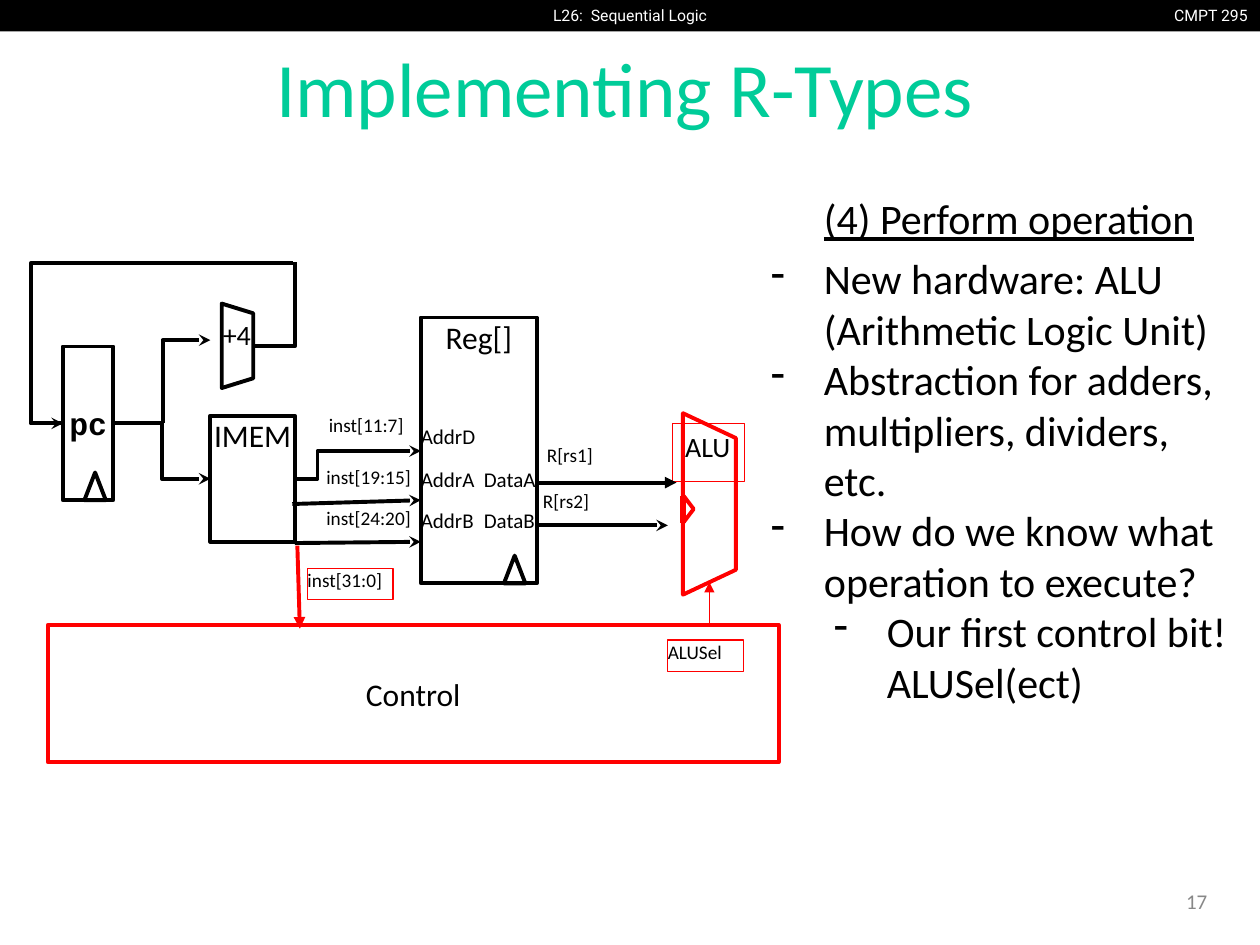
import pptx
import pptx.util
import pptx.dml.color
import pptx.enum.shapes
import pptx.enum.text
import pptx.oxml
import pptx.oxml.ns

hues = {"black": "000000", "white": "FFFFFF", "red": "FF0000",
        "green": "00CC99", "gray": "888888"}
kinds = pptx.enum.shapes.MSO_SHAPE
links = pptx.enum.shapes.MSO_CONNECTOR
sides = pptx.enum.text.PP_ALIGN
spots = pptx.enum.text.MSO_ANCHOR
Pt = pptx.util.Pt
xmlns = pptx.oxml.ns.nsdecls("a")
tint = {name: pptx.dml.color.RGBColor.from_string(code)
        for name, code in hues.items()}

deck = pptx.Presentation()
deck.slide_width = pptx.util.Inches(10)
deck.slide_height = pptx.util.Inches(7.5)
col = deck.slide_width / 100
row = deck.slide_height / 75
slide = deck.slides.add_slide(deck.slide_layouts[6])


def box(place, text="", kind=None, fill=None, line=None, thick=2.25, turn=0,
        skew=None, pad=(0, 0), side="LEFT", spot="TOP", hue="black", size=18,
        face="Calibri", bold=False):
    x, y, w, h = place
    area = [round(n) for n in (x * col, y * row, w * col, h * row)]
    if kind is None:
        item = slide.shapes.add_textbox(*area)
    else:
        item = slide.shapes.add_shape(kind, *area)
        item.shadow.inherit = False
        item.rotation = turn
        if skew is not None:
            item.adjustments[0] = skew
        if fill:
            item.fill.solid()
            item.fill.fore_color.rgb = tint[fill]
        else:
            item.fill.background()
        if line:
            item.line.color.rgb = tint[line]
            item.line.width = Pt(thick)
        else:
            item.line.fill.background()
    frame = item.text_frame
    across, down = round(pad[0] * col), round(pad[1] * row)
    look = {"word_wrap": True, "vertical_anchor": getattr(spots, spot),
            "margin_left": across, "margin_right": across,
            "margin_top": down, "margin_bottom": down}
    for key, value in look.items():
        setattr(frame, key, value)
    if text:
        para = frame.paragraphs[0]
        para.alignment = getattr(sides, side)
        run = para.add_run()
        run.text = text
        for key, value in {"name": face, "size": Pt(size), "bold": bold}.items():
            setattr(run.font, key, value)
        run.font.color.rgb = tint[hue]
    return item


def wire(start, end, hue="black", thick=2.25, head=None, bend=None):
    kind = links.STRAIGHT if bend is None else links.ELBOW
    ends = [round(n) for x, y in (start, end) for n in (x * col, y * row)]
    item = slide.shapes.add_connector(kind, *ends)
    item.line.color.rgb = tint[hue]
    item.line.width = Pt(thick)
    props = item._element.spPr
    if head:
        props.find(pptx.oxml.ns.qn("a:ln")).append(
            pptx.oxml.parse_xml(f'<a:tailEnd {xmlns} type="{head}"/>'))
    if bend is not None:
        guide = f'<a:gd {xmlns} name="adj1" fmla="val {round(bend * 100000)}"/>'
        shape = props.find(pptx.oxml.ns.qn("a:prstGeom"))
        shape.get_or_add_avLst().append(pptx.oxml.parse_xml(guide))
    props.append(pptx.oxml.parse_xml(f"<a:effectLst {xmlns}/>"))


roomy = {"pad": (1, 0.5)}
rect, wedge, peak = kinds.RECTANGLE, kinds.TRAPEZOID, kinds.ISOSCELES_TRIANGLE
solid = {"kind": rect, "fill": "white", "side": "CENTER"}
band = {**roomy, "size": 9, "face": "Roboto", "hue": "white"}

box((0, 0, 100, 2.5), kind=rect, fill="black")
box((90, 0, 10, 2.5), "CMPT 295", side="RIGHT", **band)
box((40, 0, 20, 2.5), "L26:  Sequential Logic", side="CENTER", **band)
title = box((2.4, 1.6, 94.4, 11.5), "Implementing R-Types", side="CENTER",
            spot="MIDDLE", hue="green", size=44, **roomy)
title.text_frame.paragraphs[0].line_spacing = 0.9
box((74.3, 69.5, 22.5, 4), "17", side="RIGHT", spot="MIDDLE", hue="gray",
    size=12, **roomy)

box((16.7, 33, 6.7, 10), "IMEM", line="black", **solid)
box((15.5, 26.2, 6.7, 2.5), kind=wedge, line="black", turn=90, skew=0.31)
plus = box((16.7, 25.2, 3.6, 3.6), "+4", size=16)
plus.text_frame.margin_left = round(col)

box((49.1, 37.9, 14.4, 4.2), kind=wedge, fill="white", line="red",
    turn=90, skew=0.47)
box((53.6, 40, 2.1, 0.8), kind=peak, line="red", turn=90)
wire((54.2, 39.4), (54.2, 41.5), "red", 3)
box((53.4, 33.6, 5.7, 4.6), "ALU", kind=rect, line="red", thick=0.75,
    size=16, **roomy)

box((5, 27.5, 4, 12.2), "pc", line="black", spot="MIDDLE",
    face="Courier New", bold=True, **solid)
box((3.8, 49.6, 58, 10.9), "Control", line="red", spot="MIDDLE",
    **roomy, **solid)
box((33.4, 25.2, 9.2, 21.1), "Reg[]", line="black", **solid)
for x, y in ((6.7, 37.5), (40, 44.1)):
    box((x, y, 1.7, 2.2), kind=peak, line="black")

for x, y, port in ((33.4, 33.6, "AddrD"), (33.4, 37, "AddrA"),
                   (33.4, 40.3, "AddrB"), (38.4, 37, "DataA"),
                   (38.4, 40.3, "DataB")):
    box((x, y, 4.6, 2.7), port, size=12)

for x, y, label in ((26.1, 32.8, "inst[11:7]"), (25.9, 36.9, "inst[19:15]"),
                    (25.9, 40.2, "inst[24:20]"), (43.4, 35.2, "R[rs1]"),
                    (43.1, 38.8, "R[rs2]")):
    box((x, y, 7, 2.5), label, size=11)
for x, y, w, label in ((53, 50.8, 6, "ALUSel"), (24.4, 45.1, 6.8, "inst[31:0]")):
    box((x, y, w, 2.5), label, kind=rect, line="red", thick=0.75, size=11)

for start, end, head, bend in (
        ((3.4, 33.6), (5, 33.6), None, None),
        ((9, 33.6), (16.7, 38), "stealth", 0.5),
        ((12.9, 33.6), (16.7, 27), "stealth", 0),
        ((20, 27.5), (23.4, 20.8), None, 1),
        ((23.3, 20.9), (5, 33.6), "stealth", 1.14),
        ((23.4, 38), (33.4, 35.8), "stealth", 0.18),
        ((23.2, 40), (33.4, 39.7), "stealth", None),
        ((23.4, 43.1), (33.4, 43), "stealth", None),
        ((42.5, 41.7), (53, 41.7), "stealth", None),
        ((42.6, 38.3), (53.7, 38.3), "triangle", None)):
    wire(start, end, head=head, bend=bend)
wire((56.3, 49.7), (56.3, 46.2), "red", 0.75, "triangle")
wire((23.6, 43.3), (23.8, 49.9), "red", 2.25, "triangle")

notes = box((59.4, 14.8, 39.2, 52.4), **roomy).text_frame
dash = (f'<a:buClr {xmlns}><a:srgbClr val="{hues["black"]}"/></a:buClr>',
        f'<a:buChar {xmlns} char="-"/>')
for rank, (level, text) in enumerate((
        (0, "(4) Perform operation"),
        (0, "New hardware: ALU (Arithmetic Logic Unit)"),
        (0, "Abstraction for adders, multipliers, dividers, etc."),
        (0, "How do we know what operation to execute?"),
        (1, "Our first control bit! ALUSel(ect)"))):
    para = notes.add_paragraph() if rank else notes.paragraphs[0]
    para.level = level
    para.space_before = Pt(5.6 if rank == 1 else 0)
    props = para._p.get_or_add_pPr()
    props.set("marL", str(round((level + 1) * 5 * col)))
    props.set("indent", str(round(-4.2 * col) if rank else 0))
    if rank:
        for part in dash:
            props.append(pptx.oxml.parse_xml(part))
    run = para.add_run()
    run.text = text
    for key, value in {"name": "Calibri", "size": Pt(24),
                       "underline": rank == 0}.items():
        setattr(run.font, key, value)
    run.font.color.rgb = tint["black"]

deck.save("out.pptx")
